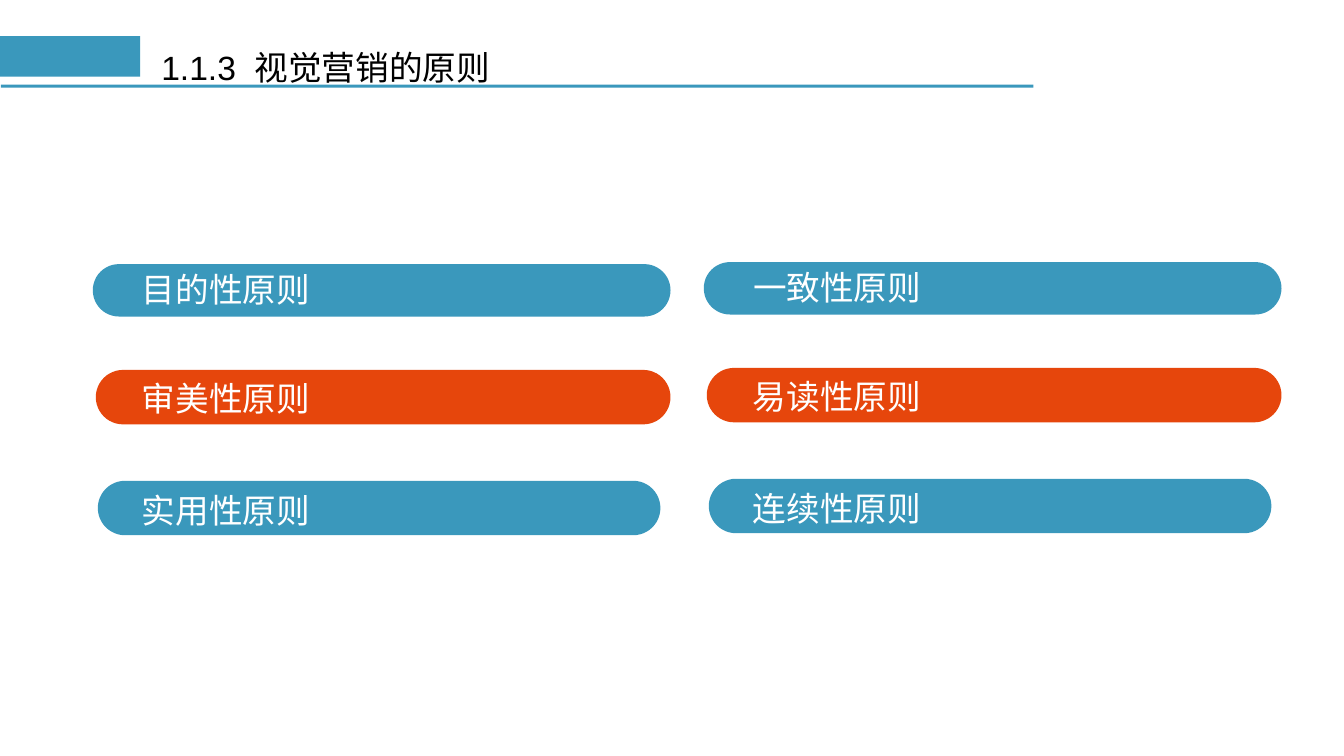
from pptx import Presentation
from pptx.dml.color import RGBColor
from pptx.enum.shapes import MSO_SHAPE
from pptx.enum.text import MSO_ANCHOR, MSO_AUTO_SIZE, PP_ALIGN
from pptx.oxml.ns import qn
from pptx.util import Inches, Pt
from lxml import etree

RECT = MSO_SHAPE.RECTANGLE
ROUND_TOP = MSO_SHAPE.ROUND_2_SAME_RECTANGLE
MIDDLE = MSO_ANCHOR.MIDDLE
LEFT = PP_ALIGN.LEFT
NO_FIT = MSO_AUTO_SIZE.NONE
FIT_SHAPE = MSO_AUTO_SIZE.SHAPE_TO_FIT_TEXT

BLUE, ORANGE, WHITE, BLACK = "3A98BC", "E6460C", "FFFFFF", "000000"


def color(value):
    return RGBColor.from_string(value)


class Deck:
    east_asian = "Noto Sans CJK SC"
    size = 24

    def __init__(self):
        self.prs = Presentation()
        self.prs.slide_width = Inches(13.33)
        self.prs.slide_height = Inches(7.5)
        self.s = self.prs.slides.add_slide(self.prs.slide_layouts[5])

    def set_text(self, tf, text, font, fill):
        tf.text = text
        p = tf.paragraphs[0]
        p.alignment = LEFT
        r = p.runs[0]
        r.font.size = Pt(self.size)
        r.font.name = font
        r.font.color.rgb = color(fill)
        ea = etree.SubElement(r._r.get_or_add_rPr(), qn("a:ea"))
        ea.set("typeface", self.east_asian)
        return p

    def shape(self, kind, x, y, w, h, fill):
        sp = self.s.shapes.add_shape(kind, Inches(x), Inches(y), Inches(w), Inches(h))
        sp.shadow.inherit = False
        sp.fill.solid()
        sp.fill.fore_color.rgb = color(fill)
        sp.line.fill.background()
        return sp

    def pill(self, x, y, w, h, fill):
        sp = self.shape(ROUND_TOP, x + (w - h) / 2, y + (h - w) / 2, h, w, fill)
        sp.rotation = 90
        sp.adjustments[0] = sp.adjustments[1] = 0.5

    def label(self, text, x, y, w):
        sp = self.s.shapes.add_textbox(Inches(x), Inches(y), Inches(w), Inches(0.5))
        tf = sp.text_frame
        tf.word_wrap = True
        tf.auto_size = FIT_SHAPE
        self.set_text(tf, text, "Times New Roman", WHITE)

    def title(self, text, x, y, w, h):
        sp = self.s.shapes.title
        sp.left, sp.top = Inches(x), Inches(y)
        sp.width, sp.height = Inches(w), Inches(h)
        tf = sp.text_frame
        tf.auto_size = NO_FIT
        tf.vertical_anchor = MIDDLE
        tf.margin_left = tf.margin_right = Inches(0.13)
        tf.margin_top = tf.margin_bottom = Inches(0.07)
        p = self.set_text(tf, text, "Arial", BLACK)
        p.line_spacing = 0.9


def main():
    deck = Deck()
    deck.shape(RECT, 0.01, 0.84, 10.24, 0.03, BLUE)
    deck.shape(RECT, 0, 0.36, 1.39, 0.4, BLUE)
    deck.title("1.1.3  视觉营销的原则", 1.47, 0.46, 10.93, 0.47)

    rows = [
        (0.92, 2.62, 5.73, 0.52, BLUE, 2.62, 3.82),
        (0.95, 3.67, 5.7, 0.54, ORANGE, 3.7, 5.77),
        (0.97, 4.77, 5.58, 0.54, BLUE, 4.81, 4.93),
    ]
    columns = [
        (0, 0, ["目的性原则", "审美性原则", "实用性原则"]),
        (6.06, -0.02, ["一致性原则", "易读性原则", "连续性原则"]),
    ]
    for dx, dy, principles in columns:
        for principle, (x, y, w, h, fill, text_y, text_w) in zip(principles, rows):
            deck.pill(x + dx, y + dy, w, h, fill)
            deck.label(principle, 1.31 + dx, text_y + dy, text_w)

    deck.prs.save("out.pptx")


if __name__ == "__main__":
    main()
